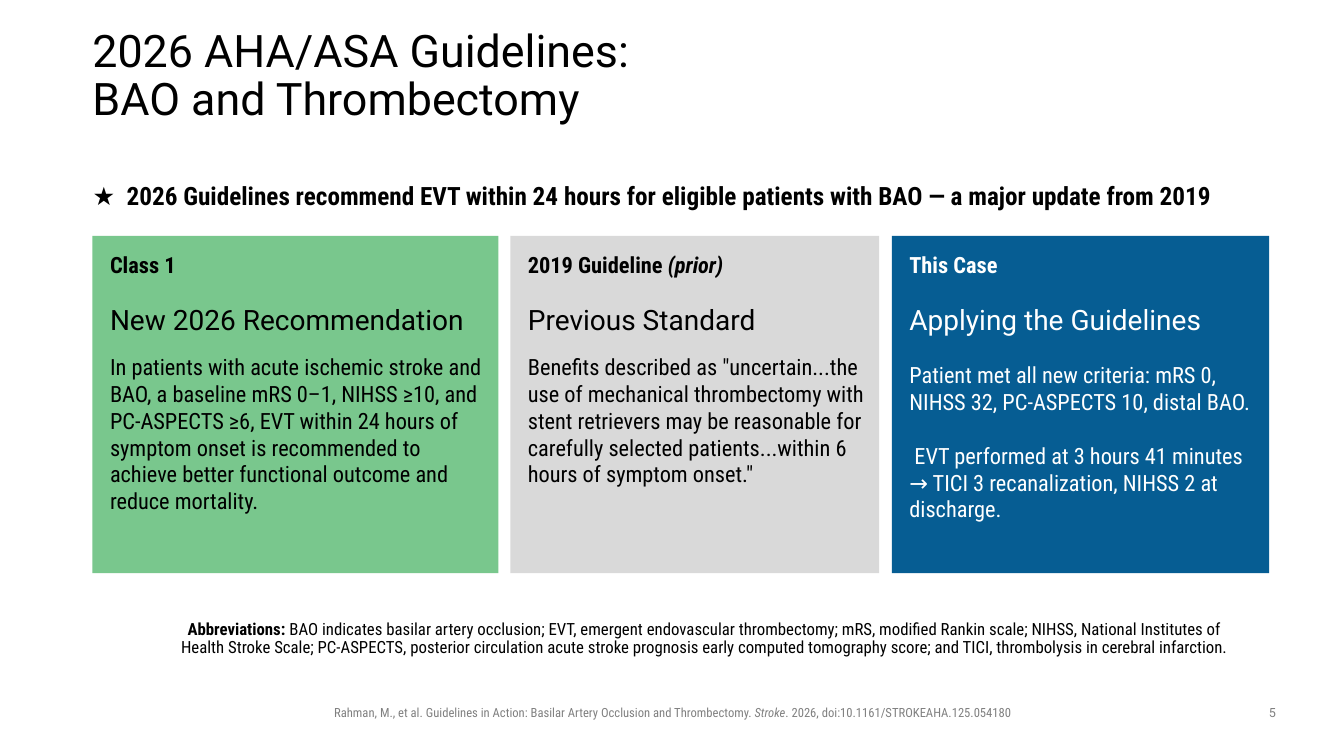
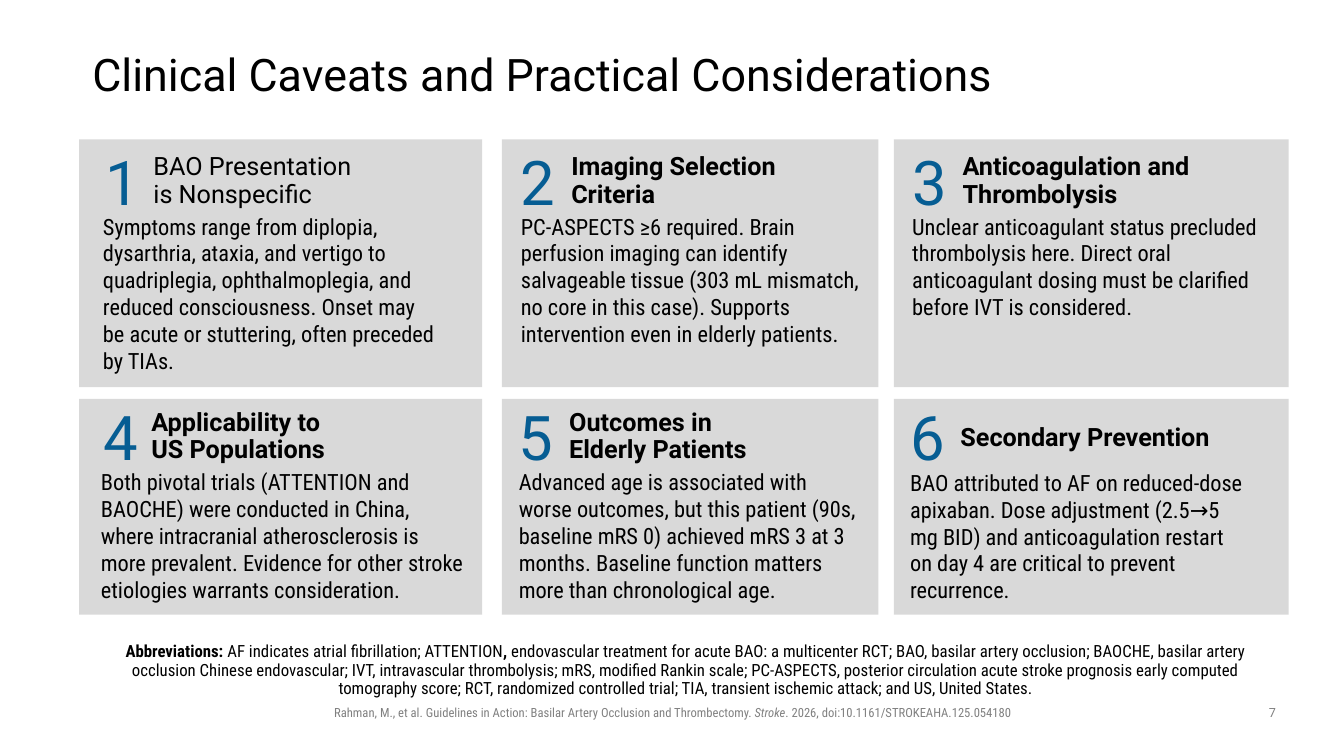
from pptx import Presentation
from pptx.dml.color import RGBColor
from pptx.enum.shapes import MSO_SHAPE as Form
from pptx.enum.text import MSO_ANCHOR as Anchor, PP_ALIGN as Align
from pptx.util import Pt

hue = RGBColor.from_string
BLACK, WHITE, GRAY = "000000", "FFFFFF", "808080"
GREEN, SILVER, BLUE = "79C78D", "D9D9D9", "065D93"
SANS, SLIM = "Roboto", "Roboto Condensed"


def place(slide, left, top, width, height, fill=None):
    spot = Pt(left), Pt(top), Pt(width), Pt(height)
    if fill:
        card = slide.shapes.add_shape(Form.RECTANGLE, *spot)
        card.shadow.inherit = False
        card.fill.solid()
        card.fill.fore_color.rgb = hue(fill)
        card.line.fill.background()
        return card.text_frame
    frame = slide.shapes.add_textbox(*spot).text_frame
    frame.word_wrap = True
    return frame


def say(frame, size, face, ink, *parts, after=0, line=1.0, align=Align.LEFT):
    para = frame.paragraphs[0]
    if para.runs:
        para = frame.add_paragraph()
    para.alignment = align
    para.line_spacing = line
    para.space_after = Pt(after)
    for text, style in parts:
        for row, piece in enumerate(text.split("\n")):
            if row:
                para.add_line_break()
            run = para.add_run()
            run.text = piece
            font = run.font
            font.name, font.size = face, Pt(size)
            font.bold, font.italic = "b" in style, "i" in style
            font.color.rgb = hue(ink)
    return para


deck = Presentation()
deck.slide_width, deck.slide_height = Pt(960), Pt(540)

pages = [
    ("2026 AHA/ASA Guidelines:\nBAO and Thrombectomy", "5", (120, 437, 774, 36), [
        ("BAO indicates basilar artery occlusion; EVT, emergent endovascular "
         "thrombectomy; mRS, modified Rankin scale; NIHSS, National Institutes of "
         "Health Stroke Scale; PC-ASPECTS, posterior circulation acute stroke "
         "prognosis early computed tomography score; and TICI, thrombolysis in "
         "cerebral infarction.", ""),
    ]),
    ("Clinical Caveats and Practical Considerations", "7", (81, 454, 825, 48), [
        ("AF indicates atrial fibrillation; ATTENTION", ""),
        (",", "b"),
        (" endovascular treatment for acute BAO: a multicenter RCT; BAO, basilar "
         "artery occlusion; BAOCHE, basilar artery occlusion Chinese endovascular; "
         "IVT, intravascular thrombolysis; mRS, modified Rankin scale; PC-ASPECTS, "
         "posterior circulation acute stroke prognosis early computed tomography "
         "score; RCT, randomized controlled trial; TIA, transient ischemic attack; "
         "and US, United States.", ""),
    ]),
]
slides = []
for title, number, spot, terms in pages:
    slide = deck.slides.add_slide(deck.slide_layouts[6])
    slides.append(slide)
    head = place(slide, 66, 29, 828, 52)
    head.margin_left = head.margin_right = head.margin_top = head.margin_bottom = 0
    head.vertical_anchor = Anchor.MIDDLE
    say(head, 32, SANS, BLACK, (title, ""), line=0.9)
    notes = place(slide, *spot)
    notes.margin_left = 0
    notes.vertical_anchor = Anchor.BOTTOM
    say(notes, 12, SLIM, BLACK, ("Abbreviations: ", "b"), *terms,
        line=0.9, align=Align.CENTER)
    say(place(slide, 170, 500, 621, 18), 9, SLIM, GRAY,
        ("Rahman, M., et al. Guidelines in Action: Basilar Artery Occlusion "
         "and Thrombectomy. ", ""),
        ("Stroke", "i"),
        (". 2026, doi:10.1161/STROKEAHA.125.054180", ""), align=Align.CENTER)
    say(place(slide, 894, 500, 30, 19), 9, SANS, GRAY, (number, ""),
        align=Align.CENTER)

guide, caveat = slides

say(place(guide, 59, 125, 838, 29), 18, SLIM, BLACK,
    ("★  2026 Guidelines recommend EVT within 24 hours for eligible patients "
     "with BAO — a major update from 2019", "b"))

cards = [
    (66, 290, GREEN, BLACK, [("Class 1", "b")], "New 2026 Recommendation", 12, [
        "In patients with acute ischemic stroke and BAO, a baseline mRS 0–1, "
        "NIHSS ≥10, and PC-ASPECTS ≥6, EVT within 24 hours of symptom onset is "
        "recommended to achieve better functional outcome and reduce mortality.",
    ]),
    (364.5, 263.5, SILVER, BLACK, [("2019 Guideline ", "b"), ("(prior)", "bi")],
     "Previous Standard", 12, [
        "Benefits described as \"uncertain...the use of mechanical thrombectomy "
        "with stent retrievers may be reasonable for carefully selected "
        "patients...within 6 hours of symptom onset.\"",
    ]),
    (637, 269.5, BLUE, WHITE, [("This Case", "b")], "Applying the Guidelines", 18, [
        "Patient met all new criteria: mRS 0, NIHSS 32, PC-ASPECTS 10, distal BAO.",
        " EVT performed at 3 hours 41 minutes → TICI 3 recanalization, NIHSS 2 at "
        "discharge.",
    ]),
]
for left, width, fill, ink, label, head, gap, body in cards:
    place(guide, left, 168.5, width, 241, fill)
    frame = place(guide, left + 5.5, 175.5, width - 6, 220)
    say(frame, 16, SLIM, ink, *label, after=18)
    say(frame, 20, SANS, ink, (head, ""), after=gap)
    for text in body:
        say(frame, 16, SLIM, ink, (text, ""), after=0 if text == body[-1] else 19)

cols = [(56.5, 288, 66.5), (358.5, 269, 365), (638.5, 282, 644.5)]
rows = [(99.5, 177, 0), (285, 154, 1.5)]
points = [
    ("BAO Presentation\nis Nonspecific", "", 255,
     "Symptoms range from diplopia, dysarthria, ataxia, and vertigo to "
     "quadriplegia, ophthalmoplegia, and reduced consciousness. Onset may be "
     "acute or stuttering, often preceded by TIAs."),
    ("Imaging Selection Criteria", "b", 260,
     "PC-ASPECTS ≥6 required. Brain perfusion imaging can identify salvageable "
     "tissue (303 mL mismatch, no core in this case). Supports intervention even "
     "in elderly patients."),
    ("Anticoagulation and Thrombolysis", "b", 271.5,
     "Unclear anticoagulant status precluded thrombolysis here. Direct oral "
     "anticoagulant dosing must be clarified before IVT is considered."),
    ("Applicability to\nUS Populations", "b", 275,
     "Both pivotal trials (ATTENTION and BAOCHE) were conducted in China, where "
     "intracranial atherosclerosis is more prevalent. Evidence for other stroke "
     "etiologies warrants consideration."),
    ("Outcomes in\nElderly Patients", "b", 255,
     "Advanced age is associated with worse outcomes, but this patient (90s, "
     "baseline mRS 0) achieved mRS 3 at 3 months. Baseline function matters more "
     "than chronological age."),
    ("Secondary Prevention", "b", 257,
     "BAO attributed to AF on reduced-dose apixaban. Dose adjustment (2.5→5 mg "
     "BID) and anticoagulation restart on day 4 are critical to prevent "
     "recurrence."),
]
for i, (head, style, span, text) in enumerate(points):
    left, width, inner = cols[i % 3]
    top, height, shift = rows[i // 3]
    single = head == "Secondary Prevention"
    place(caveat, left, top, width, height, SILVER)
    base = top - 2 * shift
    say(place(caveat, inner - shift + (2 if i % 3 == 0 else 0), base - 0.5, 42, 58),
        44, SANS, BLUE, (str(i + 1), ""))
    frame = place(caveat, inner - shift, base + (18 if single else 7), span, 146)
    para = say(frame, 18, SANS, BLACK, (head, style),
               after=12 if single else 3, line=0.9)
    para._p.get_or_add_pPr().set("marL", str(Pt(36)))
    say(frame, 16, SLIM, BLACK, (text, ""))

deck.save("out.pptx")
